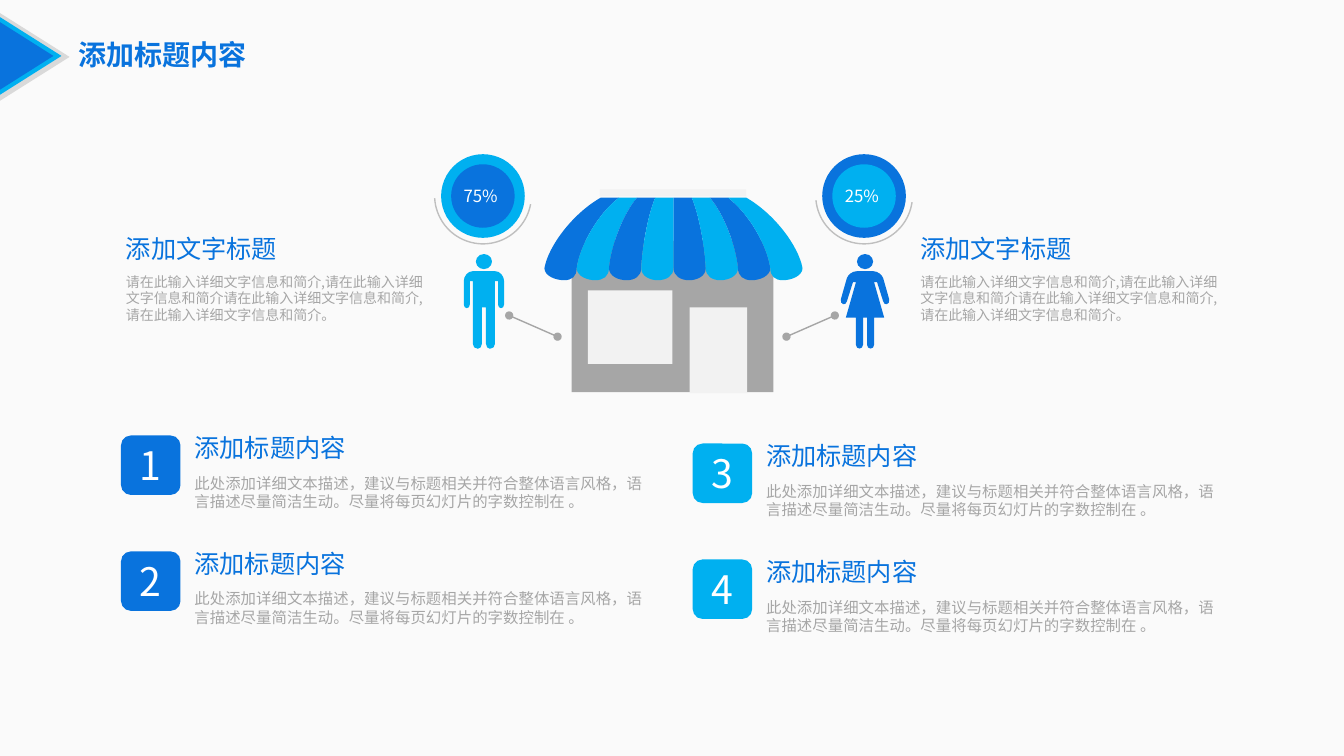
"""Build a slide with a shop, two customer shares and four numbered points."""
from lxml.etree import SubElement
from pptx import Presentation
from pptx.dml.color import RGBColor
from pptx.enum.shapes import MSO_CONNECTOR, MSO_SHAPE
from pptx.enum.text import MSO_ANCHOR, MSO_AUTO_SIZE, PP_ALIGN
from pptx.oxml.ns import qn
from pptx.util import Inches, Pt

BLUE = RGBColor(0x09, 0x73, 0xDD)
CYAN = RGBColor(0x00, 0xB0, 0xF0)
GRAY = RGBColor(0xA6, 0xA6, 0xA6)
SILVER = RGBColor(0xBF, 0xBF, 0xBF)
EDGE = RGBColor(0xD9, 0xD9, 0xD9)
PALE = RGBColor(0xF2, 0xF2, 0xF2)
WHITE = RGBColor(0xFF, 0xFF, 0xFF)
PAPER = RGBColor(0xFA, 0xFA, 0xFA)
FONT = "Noto Sans CJK SC"

deck = Presentation()
deck.slide_width, deck.slide_height = Inches(13.33), Inches(7.5)
slide = deck.slides.add_slide(deck.slide_layouts[6])
slide.background.fill.solid()
slide.background.fill.fore_color.rgb = PAPER
shapes = slide.shapes


def draw(kind, left, top, width, height, color, turn=0):
    """Add a filled preset shape without outline."""
    shape = shapes.add_shape(kind, Inches(left), Inches(top), Inches(width), Inches(height))
    shape.shadow.inherit = False
    shape.fill.solid()
    shape.fill.fore_color.rgb = color
    shape.line.fill.background()
    shape.rotation = turn
    return shape


def write(text, box, size, color, shape=None, bold=False, wrap=True):
    """Put text in a new box, or centred in the given shape."""
    host = shape or shapes.add_textbox(*map(Inches, box))
    frame = host.text_frame
    frame.word_wrap = wrap
    line = frame.paragraphs[0]
    if shape:
        frame.vertical_anchor = MSO_ANCHOR.MIDDLE
        line.alignment = PP_ALIGN.CENTER
    else:
        frame.auto_size = MSO_AUTO_SIZE.SHAPE_TO_FIT_TEXT
    run = line.add_run()
    run.text = text
    run.font.size, run.font.bold, run.font.name = Pt(size), bold, FONT
    run.font.color.rgb = color
    SubElement(run.font._element, qn("a:ea"), typeface=FONT)


for left, top, width, height, color in [
    (-0.09, 0.22, 0.87, 0.69, EDGE),
    (-0.08, 0.25, 0.77, 0.61, CYAN),
    (-0.07, 0.29, 0.67, 0.53, BLUE),
]:
    draw(MSO_SHAPE.ISOSCELES_TRIANGLE, left, top, width, height, color, turn=90)
write("添加标题内容", (0.68, 0.32, 2.36, 0.44), 20, BLUE, bold=True)

draw(MSO_SHAPE.RECTANGLE, 5.67, 2.39, 2, 1.5, GRAY)

# Steps of two numbers are lines, steps of six are cubic curves.
man = [
    (0.11, 2.69), (0.16, 2.69, 0.2, 2.74, 0.2, 2.79), (0.2, 3.02),
    (0.2, 3.07, 0.14, 3.07, 0.14, 3.02), (0.14, 2.79), (0.11, 2.79), (0.11, 3.41),
    (0.11, 3.44, 0.09, 3.46, 0.06, 3.46), (0.04, 3.46, 0.02, 3.44, 0.02, 3.41),
    (0.02, 3.05),
]
woman = [
    (0.08, 2.69), (0.13, 2.69, 0.17, 2.73, 0.18, 2.76), (0.24, 2.97),
    (0.25, 3.02, 0.19, 3.04, 0.18, 2.99), (0.12, 2.8), (0.09, 2.8), (0.19, 3.15),
    (0.09, 3.15), (0.09, 3.42), (0.09, 3.47, 0.02, 3.47, 0.02, 3.42), (0.02, 3.15),
]
outlines = []
for i in range(8):
    a, b = i - 4, i - 3
    mid = 0.31 * (i - 3.5)
    stripe = [
        (0.32 * a, 2.66),
        (0.32 * a, 2.74, mid - 0.08, 2.78, mid, 2.78),
        (mid + 0.08, 2.78, 0.32 * b, 2.74, 0.32 * b, 2.66),
        (0.31 * b, 2.44, 0.25 * b, 2.12, 0.18 * b, 1.96),
        (0.18 * a, 1.96),
        (0.25 * a, 2.12, 0.31 * a, 2.44, 0.32 * a, 2.66),
    ]
    outlines.append((6.68, CYAN if i % 2 else BLUE, False, stripe))
outlines += [(4.8, CYAN, True, man), (8.58, BLUE, True, woman)]

for center, color, mirror, steps in outlines:
    points = [steps[0]]
    for step in steps[1:]:
        curve = step if len(step) == 6 else step * 3
        points += zip(curve[::2], curve[1::2])
    if mirror:
        other = [(-x, y) for x, y in reversed(points)]
        points += other[:1] * 2 + other
    spots = [(Inches(center + x), Inches(y)) for x, y in points]
    pen = shapes.build_freeform(*spots[0])
    pen.add_line_segments(spots[1:], close=True)
    form = pen.convert_to_shape()
    form.shadow.inherit = False
    form.fill.solid()
    form.fill.fore_color.rgb = color
    form.line.fill.background()
    lines = list(form._element.iter(qn("a:lnTo")))
    for first, second, third in zip(lines[::3], lines[1::3], lines[2::3]):
        trace = first.getparent()
        bend = SubElement(trace, qn("a:cubicBezTo"))
        trace.replace(first, bend)
        for part in (first, second, third):
            bend.append(part[0])
        trace.remove(second)
        trace.remove(third)

for box in [(5.95, 1.88, 1.45, 0.07), (5.83, 2.88, 0.84, 0.73), (6.84, 3.05, 0.57, 0.85)]:
    draw(MSO_SHAPE.RECTANGLE, *box, PALE)

detail = ("请在此输入详细文字信息和简介,请在此输入详细文字信息和简介"
          "请在此输入详细文字信息和简介,请在此输入详细文字信息和简介。")
for x, share, ring, core, turn, start, end, left in [
    (4.79, "75%", CYAN, BLUE, 100.3, 5.05, 5.53, 1.15),
    (8.57, "25%", BLUE, CYAN, 97.9, 8.28, 7.8, 9.03),
]:
    draw(MSO_SHAPE.OVAL, x - 0.07, 2.52, 0.16, 0.15, ring)
    for top, size, color in [(1.53, 0.83, ring), (1.63, 0.63, core)]:
        draw(MSO_SHAPE.OVAL, x - size / 2, top, size, size, color)
    arc = draw(MSO_SHAPE.ARC, x - 0.48, 1.46, 0.96, 0.96, WHITE, turn=turn)
    arc.fill.background()
    arc.adjustments[0], arc.adjustments[1] = 162, 45.87
    arc.line.color.rgb = SILVER
    arc.line.width = Pt(1)
    write(share, (x - 0.29, 1.79, 0.55, 0.3), 12, WHITE, wrap=False)
    link = shapes.add_connector(
        MSO_CONNECTOR.STRAIGHT, Inches(start), Inches(3.13), Inches(end), Inches(3.34))
    link.line.color.rgb = GRAY
    link.line.width = Pt(1)
    for tip in ("a:headEnd", "a:tailEnd"):
        SubElement(link.line._get_or_add_ln(), qn(tip), type="oval")
    SubElement(link._element.spPr, qn("a:effectLst"))
    write("添加文字标题", (left, 2.27, 1.72, 0.4), 18, BLUE, wrap=False)
    write(detail, (left, 2.66, 3.15, 0.6), 10, GRAY)

note = ("此处添加详细文本描述，建议与标题相关并符合整体语言风格，"
        "语言描述尽量简洁生动。尽量将每页幻灯片的字数控制在 。")
for i in range(4):
    col, row = divmod(i, 2)
    left, top = 1.2 + 5.67 * col, 4.32 + 0.08 * col + 1.15 * row
    badge = draw(MSO_SHAPE.ROUNDED_RECTANGLE, left, top, 0.59, 0.59, CYAN if col else BLUE)
    write(str(i + 1), None, 28, WHITE, shape=badge)
    write("添加标题内容", (left + 0.63, top - 0.08, 1.72, 0.4), 18, BLUE, wrap=False)
    write(note, (left + 0.63, top + 0.33, 4.68, 0.47), 11, GRAY)

deck.save("out.pptx")
